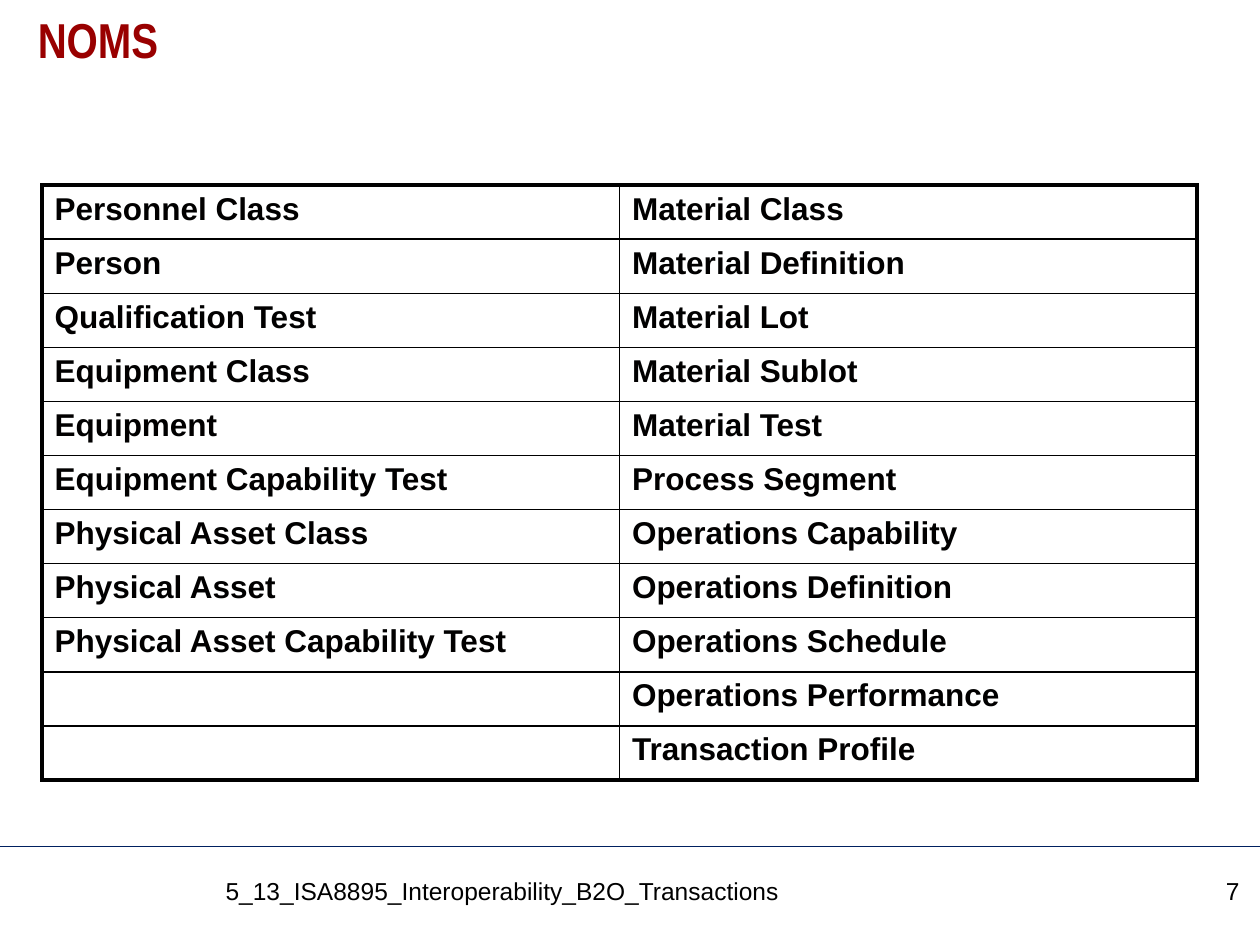
import pptx
import pptx.dml.color
import pptx.enum.shapes
import pptx.enum.text
import pptx.oxml
import pptx.oxml.ns
import pptx.util
from lxml import etree

Pt = pptx.util.Pt
ALIGN = pptx.enum.text.PP_ALIGN
COLORS = {"title": "990000", "text": "000000", "cell": "010000",
          "border": "000000", "rule": "002060"}
THICK, THIN = 2.25, 1

LEFT_TERMS = ["Personnel Class", "Person", "Qualification Test", "Equipment Class",
              "Equipment", "Equipment Capability Test", "Physical Asset Class",
              "Physical Asset", "Physical Asset Capability Test", "", ""]
RIGHT_TERMS = ["Material Class", "Material Definition", "Material Lot",
               "Material Sublot", "Material Test", "Process Segment",
               "Operations Capability", "Operations Definition",
               "Operations Schedule", "Operations Performance",
               "Transaction Profile"]


def write_text(frame, text, size=14, font="Arial", color="text", bold=False,
               align=ALIGN.LEFT, spacing=None):
    """Put one formatted paragraph into a text frame."""
    para = frame.paragraphs[0]
    para.alignment = align
    para.line_spacing = spacing
    para.font.size = Pt(size)
    if not text:
        return
    span = para.add_run()
    span.text = text
    span.font.name = font
    span.font.size = Pt(size)
    span.font.bold = bold
    span.font.color.rgb = pptx.dml.color.RGBColor.from_string(COLORS[color])


class SlideBuilder:
    def __init__(self, deck):
        self.page = deck.slides.add_slide(deck.slide_layouts[5])

    def title(self, text, left, top, width, height):
        box = self.page.shapes.title
        box.left, box.top, box.width, box.height = map(Pt, (left, top, width, height))
        frame = box.text_frame
        frame.auto_size = pptx.enum.text.MSO_AUTO_SIZE.NONE
        frame.vertical_anchor = pptx.enum.text.MSO_ANCHOR.TOP
        write_text(frame, text, size=28, font="Arial Narrow", color="title",
                   bold=True, spacing=0.9)

    def label(self, text, left, top, width, height, **style):
        box = self.page.shapes.add_textbox(*map(Pt, (left, top, width, height)))
        box.text_frame.word_wrap = True
        write_text(box.text_frame, text, **style)

    def rule(self, y, width):
        line = self.page.shapes.add_connector(
            pptx.enum.shapes.MSO_CONNECTOR.STRAIGHT, Pt(0), Pt(y), Pt(width), Pt(y))
        line.line.width = Pt(0.75)
        line.line.color.rgb = pptx.dml.color.RGBColor.from_string(COLORS["rule"])
        etree.SubElement(line._element.spPr, pptx.oxml.ns.qn("a:effectLst"))

    def border(self, cell, side, width):
        cell._tc.get_or_add_tcPr().append(pptx.oxml.parse_xml(
            f'<a:ln{side} {pptx.oxml.ns.nsdecls("a")} w="{Pt(width)}"><a:solidFill>'
            f'<a:srgbClr val="{COLORS["border"]}"/></a:solidFill></a:ln{side}>'))

    def table(self, rows, left, top, width, height):
        row_count, column_count = len(rows), len(rows[0])
        table = self.page.shapes.add_table(
            row_count, column_count, *map(Pt, (left, top, width, height))).table
        table.first_row = table.horz_banding = False
        for r, terms in enumerate(rows):
            for c, term in enumerate(terms):
                cell = table.cell(r, c)
                # Thick outer frame, thin inner lines
                edges = {"L": c == 0, "R": c == column_count - 1,
                         "T": r == 0, "B": r == row_count - 1}
                for side, outer in edges.items():
                    self.border(cell, side, THICK if outer else THIN)
                cell.fill.background()
                write_text(cell.text_frame, term, size=18, color="cell", bold=True)


def main():
    deck = pptx.Presentation()
    deck.slide_width, deck.slide_height = Pt(720), Pt(540)
    slide = SlideBuilder(deck)

    # Footer
    slide.rule(483.84, 720)
    slide.label("5_13_ISA8895_Interoperability_B2O_Transactions", 121.8, 497, 519, 32.4)
    slide.label("7", 649.4, 497, 66, 32.4, align=ALIGN.RIGHT)

    # Title and list of nouns
    slide.title("NOMS", 14.4, 5.8, 692, 60)
    slide.table(list(zip(LEFT_TERMS, RIGHT_TERMS)), 24, 105.8, 660, 340)

    deck.save("out.pptx")


if __name__ == "__main__":
    main()
